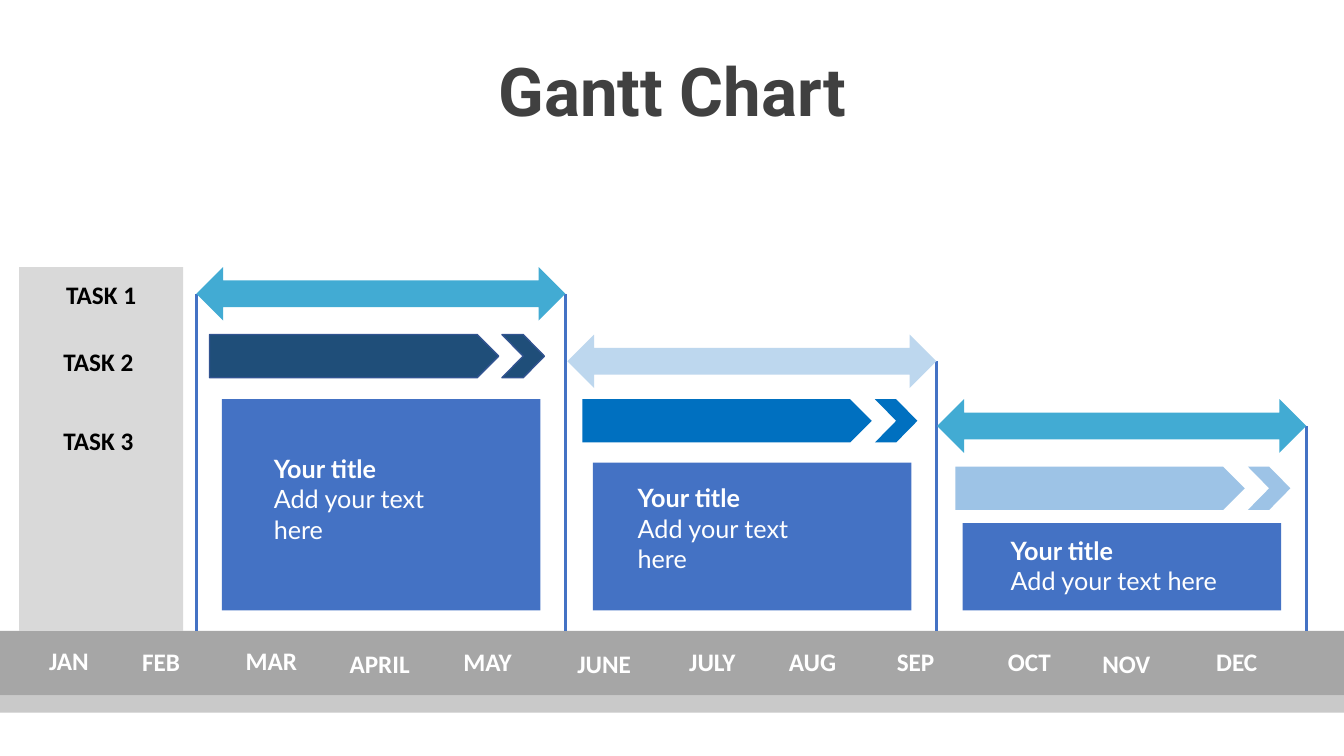
from dataclasses import dataclass

from lxml.etree import SubElement
from pptx import Presentation
from pptx.dml.color import RGBColor
from pptx.enum.shapes import MSO_CONNECTOR as Wire, MSO_SHAPE as Kind
from pptx.enum.text import MSO_AUTO_SIZE as Fit, PP_ALIGN as Align
from pptx.oxml.ns import qn
from pptx.util import Cm, Pt


@dataclass(frozen=True)
class Theme:
    white: str = "FFFFFF"
    black: str = "000000"
    title: str = "404040"
    axis: str = "A6A6A6"
    strip: str = "C9C9C9"
    panel: str = "D9D9D9"
    card: str = "4472C4"
    edge: str = "325491"
    teal: str = "42ABD3"
    pale: str = "BDD7EE"
    navy: str = "1F4E79"
    blue: str = "0070C0"
    sky: str = "9DC3E6"
    head: str = "Roboto"
    body: str = "Lato"
    label: str = "Calibri"
    big: int = 48
    small: int = 18
    rule: float = 2.25


look = Theme()

# Content; all lengths are in centimetres
TITLE = "Gantt Chart"
CARD = ("Your title", "Add your text here")
MONTHS = [  # name, left, top
    ("JAN", 0.99, 16.13), ("FEB", 3.33, 16.15), ("MAR", 5.94, 16.13),
    ("APRIL", 8.56, 16.2), ("MAY", 11.43, 16.15), ("JUNE", 14.3, 16.2),
    ("JULY", 17.12, 16.15), ("AUG", 19.63, 16.15), ("SEP", 22.35, 16.15),
    ("OCT", 25.15, 16.15), ("NOV", 27.53, 16.2), ("DEC", 30.4, 16.15),
]
TASKS = [("TASK 1", 1.42, 6.91), ("TASK 2", 1.35, 8.61), ("TASK 3", 1.35, 10.59)]
PHASES = [
    dict(span=(4.95, 6.73, look.teal), bar=(8.43, look.navy, look.edge),
         card=(5.59, 10.06), note=(6.65, 11.3, 5, 2.57)),
    dict(span=(14.3, 8.43, look.pale), bar=(10.06, look.blue, None),
         card=(14.94, 11.66), note=(15.82, 12.04, 5, 2.57)),
    dict(span=(23.62, 10.06, look.teal), bar=(11.76, look.sky, None),
         card=(24.26, 13.18), note=(25.22, 13.36, 6.15, 1.8)),
]

WIDE, HIGH = 33.87, 19.05
AXIS, AXIS_H, STRIP_H = 15.9, 1.63, 0.43
SPAN_W, SPAN_H = 9.3, 1.35
BAR_X, BAR_STEP, BAR_H = 5.28, 9.4, 1.09
PLATE_W, TIP_GAP, TIP_W = 7.29, 0.08, 1.07
CARD_W, CARD_END = 8.03, 15.38
LABEL_H = 1.02

deck = Presentation()
deck.slide_width, deck.slide_height = Cm(WIDE), Cm(HIGH)
slide = deck.slides.add_slide(deck.slide_layouts[6])


def paint(kind, x, y, w, h, fill, edge=None):
    shape = slide.shapes.add_shape(kind, Cm(x), Cm(y), Cm(w), Cm(h))
    shape.shadow.inherit = False
    shape.fill.solid()
    shape.fill.fore_color.rgb = RGBColor.from_string(fill)
    if edge:
        shape.line.color.rgb = RGBColor.from_string(edge)
        shape.line.width = Pt(1)
    else:
        shape.line.fill.background()


def write(lines, x, y, w, h, font, color, size=look.small, align=Align.LEFT):
    """Add a text box whose first line is bold."""
    frame = slide.shapes.add_textbox(Cm(x), Cm(y), Cm(w), Cm(h)).text_frame
    frame.word_wrap = True
    frame.auto_size = Fit.SHAPE_TO_FIT_TEXT
    for i, line in enumerate(lines):
        para = frame.add_paragraph() if i else frame.paragraphs[0]
        para.alignment = align
        run = para.add_run()
        run.text = line
        run.font.name = font
        run.font.size = Pt(size)
        run.font.bold = i == 0
        run.font.color.rgb = RGBColor.from_string(color)


def drop(x, y):
    """Draw a vertical line from a span's tip down to the axis."""
    line = slide.shapes.add_connector(Wire.STRAIGHT, Cm(x), Cm(y), Cm(x), Cm(AXIS))
    line.line.color.rgb = RGBColor.from_string(look.card)
    line.line.width = Pt(look.rule)
    SubElement(line._element.spPr, qn("a:effectLst"))


def main():
    paint(Kind.RECTANGLE, 0, AXIS, WIDE, AXIS_H, look.axis)
    paint(Kind.RECTANGLE, 0, AXIS + AXIS_H, WIDE, STRIP_H, look.strip)

    for i, phase in enumerate(PHASES):
        x, y, _ = phase["span"]
        if i == 0:
            drop(x, y + SPAN_H / 2)
        drop(x + SPAN_W, y + SPAN_H / 2)

    for i, phase in enumerate(PHASES):
        x, y, fill = phase["span"]
        paint(Kind.LEFT_RIGHT_ARROW, x, y, SPAN_W, SPAN_H, fill)
        x = BAR_X + i * BAR_STEP
        y, fill, edge = phase["bar"]
        paint(Kind.PENTAGON, x, y, PLATE_W, BAR_H, fill, edge)
        paint(Kind.CHEVRON, x + PLATE_W + TIP_GAP, y, TIP_W, BAR_H, fill, edge)
        x, y = phase["card"]
        paint(Kind.RECTANGLE, x, y, CARD_W, CARD_END - y, look.card)
        write(CARD, *phase["note"], look.body, look.white)

    for name, x, y in MONTHS:
        width = 2.26 if name == "APRIL" else 1.98
        write([name], x, y, width, LABEL_H, look.label, look.white)

    paint(Kind.RECTANGLE, 0.48, 6.73, 4.14, AXIS - 6.73, look.panel)
    for name, x, y in TASKS:
        write([name], x, y, 2.67, LABEL_H, look.label, look.black)

    write([TITLE], 3.56, 1.12, 26.77, 2.31, look.head, look.title,
          look.big, Align.CENTER)
    deck.save("out.pptx")


if __name__ == "__main__":
    main()
